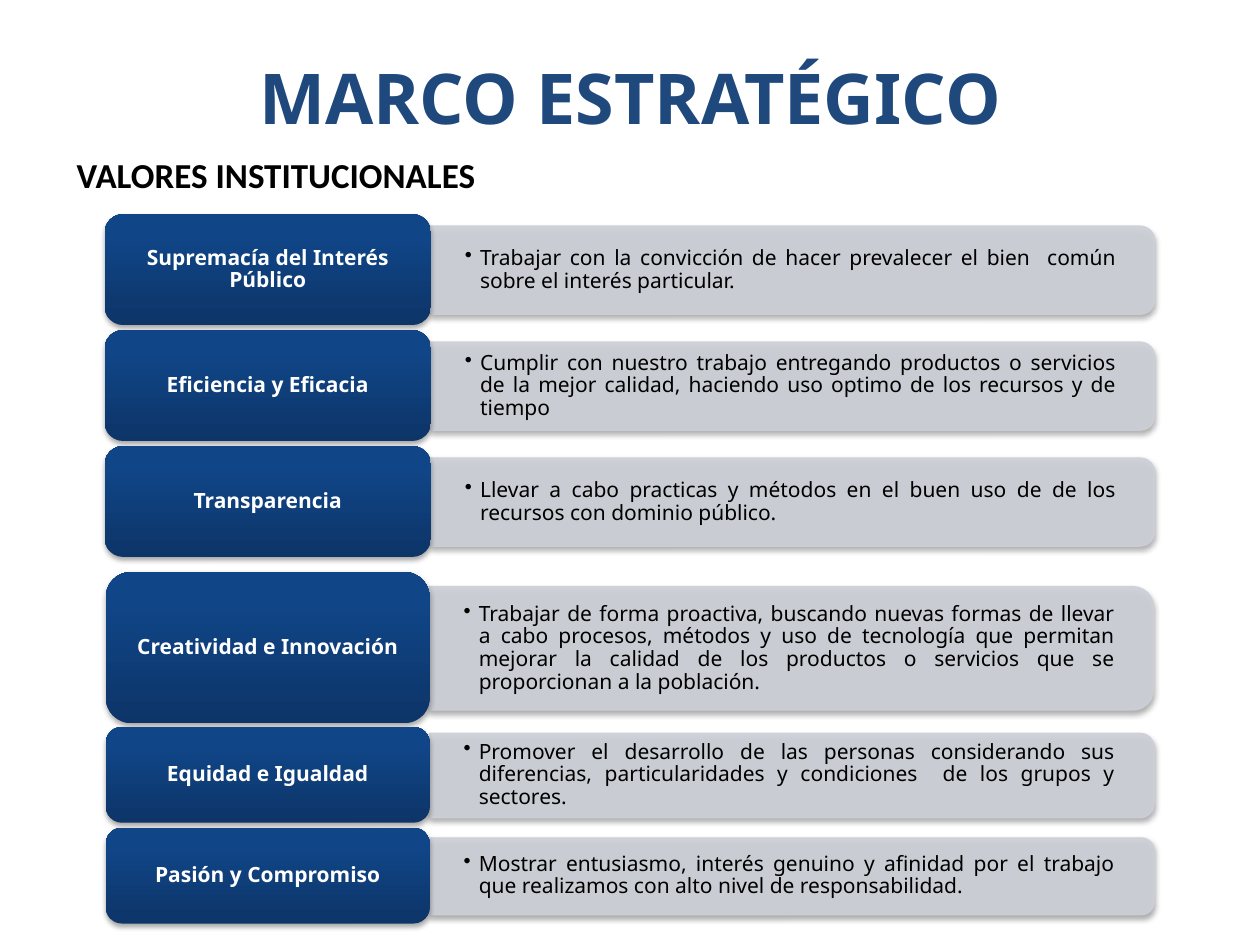
import lxml.etree
import pptx
import pptx.dml.color
import pptx.enum.shapes
import pptx.enum.text
import pptx.oxml
import pptx.oxml.ns
import pptx.util

PX = 9144  # EMU per px, 100 px to the inch
THEME = {
    "title": {"name": "Noto Sans", "size": 40, "bold": True, "color": "1F497D"},
    "heading": {"name": "Calibri", "size": 20, "bold": True, "color": "000000"},
    "label": {"name": "Noto Sans", "size": 12, "bold": True, "color": "FFFFFF"},
    "body": {"name": "Noto Sans", "size": 12, "bold": False, "color": "000000"},
    "bar": "CDD0D7",
    "gradient": [(0, "0D3568"), (80, "104587"), (100, "0E458A")],
}
ALIGN = pptx.enum.text.PP_ALIGN
MIDDLE = pptx.enum.text.MSO_ANCHOR.MIDDLE
SHAPE = pptx.enum.shapes.MSO_SHAPE
NS = pptx.oxml.ns.nsdecls("a")
qn = pptx.oxml.ns.qn

# Value, description, top and height of the label, height of the bar
ROWS = [
    ("Supremacía del Interés Público",
     "Trabajar con la convicción de hacer prevalecer el bien  común sobre el interés particular.",
     170, 88, 70),
    ("Eficiencia y Eficacia",
     "Cumplir con nuestro trabajo entregando productos o servicios de la mejor calidad, "
     "haciendo uso optimo de los recursos y de tiempo",
     262, 88, 70),
    ("Transparencia",
     "Llevar a cabo practicas y métodos en el buen uso de de los recursos con dominio público.",
     354, 88, 70),
    ("Creatividad e Innovación",
     "Trabajar de forma proactiva, buscando nuevas formas de llevar a cabo procesos, métodos y "
     "uso de tecnología que permitan mejorar la calidad de los productos o servicios que se "
     "proporcionan a la población.",
     454, 120, 98),
    ("Equidad e Igualdad",
     "Promover el desarrollo de las personas considerando sus diferencias, particularidades y "
     "condiciones  de los grupos y sectores.",
     577, 76, 67),
    ("Pasión y Compromiso",
     "Mostrar entusiasmo, interés genuino y afinidad por el trabajo que realizamos con alto "
     "nivel de responsabilidad.",
     657, 76, 61),
]


def write(sp, text, style, align, anchor=None, inset=None, spacing=None):
    """Fill the shape with one formatted paragraph and return it."""
    tf = sp.text_frame
    tf.word_wrap = True
    if anchor is not None:
        tf.vertical_anchor = anchor
    if inset:
        for side, length in zip(("left", "top", "right", "bottom"), inset * 2):
            setattr(tf, f"margin_{side}", length * PX)
    p = tf.paragraphs[0]
    p.alignment, p.line_spacing = align, spacing
    r = p.add_run()
    r.text = text
    fmt = THEME[style]
    values = {"name": fmt["name"], "size": pptx.util.Pt(fmt["size"]), "bold": fmt["bold"]}
    for name, value in values.items():
        setattr(r.font, name, value)
    r.font.color.rgb = pptx.dml.color.RGBColor.from_string(fmt["color"])
    return p


def add_shadow(sp):
    """Give the shape a soft shadow below it."""
    sp.shadow.inherit = False
    sp._element.spPr.find(qn("a:effectLst")).append(pptx.oxml.parse_xml(
        f'<a:outerShdw {NS} blurRad="40000" dist="23000" dir="5400000" rotWithShape="0">'
        '<a:srgbClr val="000000"><a:alpha val="35000"/></a:srgbClr></a:outerShdw>'))


prs = pptx.Presentation()
prs.slide_width, prs.slide_height = 1000 * PX, 750 * PX
s = prs.slides.add_slide(prs.slide_layouts[5])

# Title and heading
title = s.shapes.title
for name, length in {"left": 50, "top": 14, "width": 900, "height": 125}.items():
    setattr(title, name, length * PX)
write(title, "MARCO ESTRATÉGICO", "title", ALIGN.CENTER, MIDDLE)
heading = s.shapes.add_textbox(51 * PX, 117 * PX, 898 * PX, 44 * PX)
write(heading, "VALORES INSTITUCIONALES", "heading", ALIGN.LEFT)

# One row per value: bar, description and label share a centre line
BAR_W = 575
for i, (value, description, top, height, bar_h) in enumerate(ROWS):
    left, label_w = (83, 259) if i < 3 else (84, 257)
    bar_left = left + label_w
    centre = top + height // 2

    # Bar: turned a quarter so that its rounded corners face right
    sp = s.shapes.add_shape(
        SHAPE.ROUND_2_SAME_RECTANGLE,
        (bar_left + (BAR_W - bar_h) // 2) * PX, (centre - BAR_W // 2) * PX,
        bar_h * PX, BAR_W * PX)
    sp.rotation = 90
    sp.line.width = pptx.util.Pt(0.75)
    for fill in (sp.fill, sp.line.fill):
        fill.solid()
        fill.fore_color.rgb = pptx.dml.color.RGBColor.from_string(THEME["bar"])
    for clr in sp._element.spPr.iter(qn("a:srgbClr")):
        lxml.etree.SubElement(clr, qn("a:alpha")).set("val", "90000")
    add_shadow(sp)

    # Description with a hanging bullet
    text_h = bar_h - 7
    sp = s.shapes.add_textbox(
        bar_left * PX, (centre - text_h // 2) * PX, (BAR_W - 4) * PX, text_h * PX)
    p = write(sp, description, "body", ALIGN.JUSTIFY, MIDDLE, (27, 14), 0.9)
    p.level = 1
    pPr = p._p.get_or_add_pPr()
    pPr.set("marL", str(12 * PX))
    pPr.set("indent", str(-12 * PX))
    lxml.etree.SubElement(pPr, qn("a:buChar")).set("char", "•")

    # Label with a three-stop gradient
    sp = s.shapes.add_shape(
        SHAPE.ROUNDED_RECTANGLE, left * PX, top * PX, label_w * PX, height * PX)
    stops = "".join(f'<a:gs pos="{pos * 1000}"><a:srgbClr val="{color}"/></a:gs>'
                    for pos, color in THEME["gradient"])
    sp._element.spPr.find(qn("a:prstGeom")).addnext(pptx.oxml.parse_xml(
        f'<a:gradFill {NS} rotWithShape="1"><a:gsLst>{stops}</a:gsLst>'
        '<a:lin ang="16200000" scaled="0"/></a:gradFill>'))
    sp.line.fill.background()
    add_shadow(sp)
    write(sp, value, "label", ALIGN.CENTER, MIDDLE, (9, 7), 0.9)

prs.save("out.pptx")
